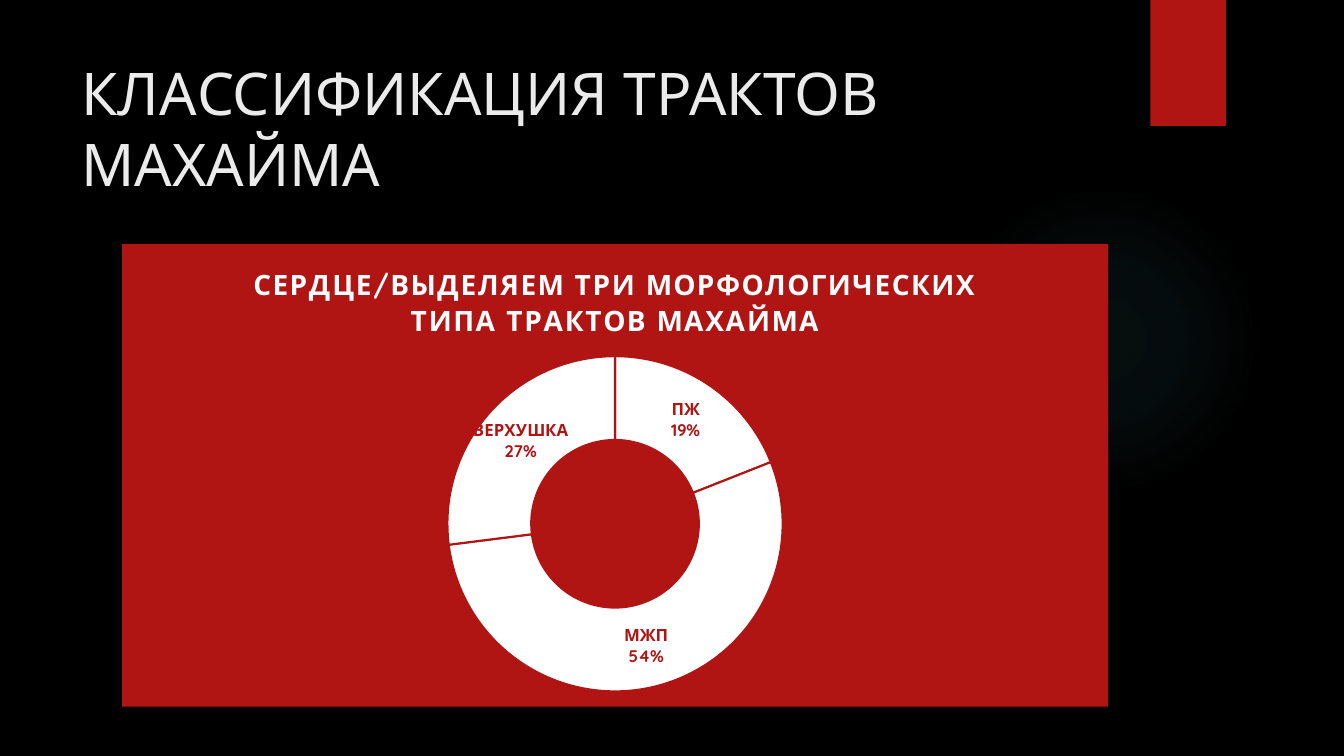
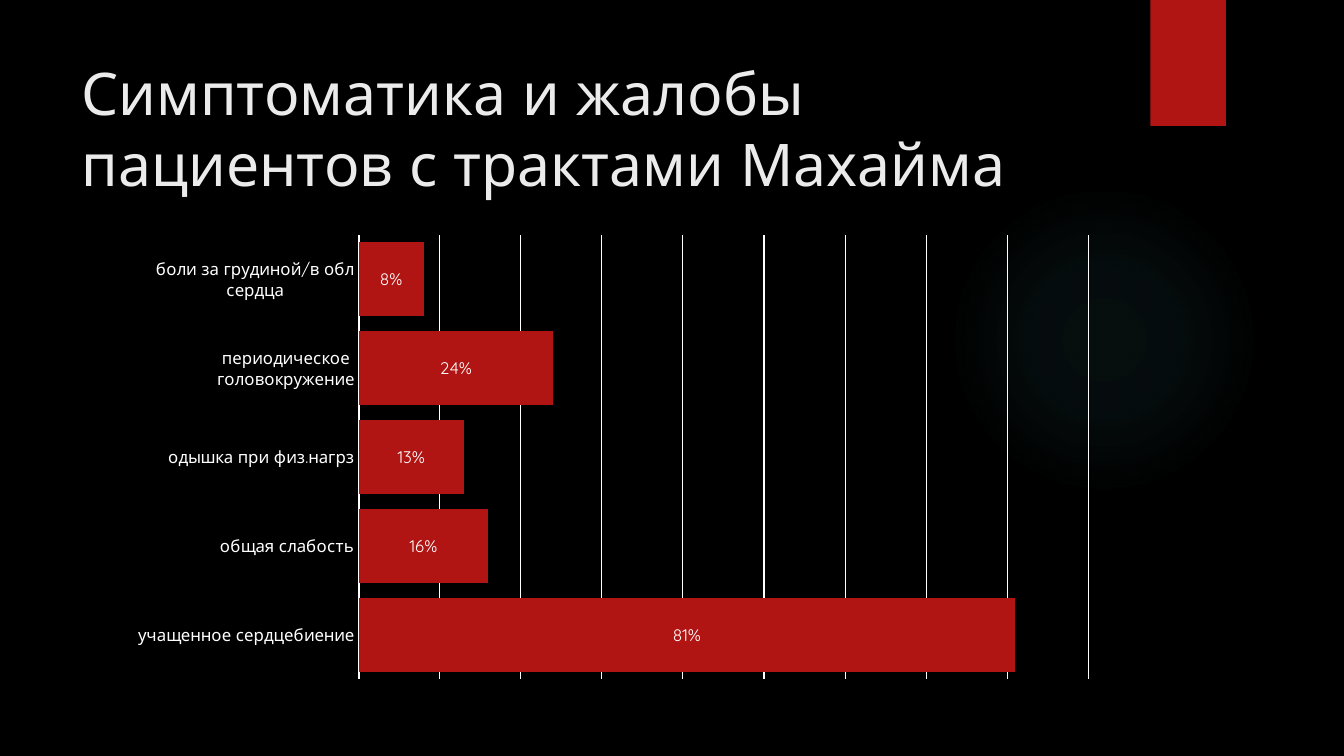
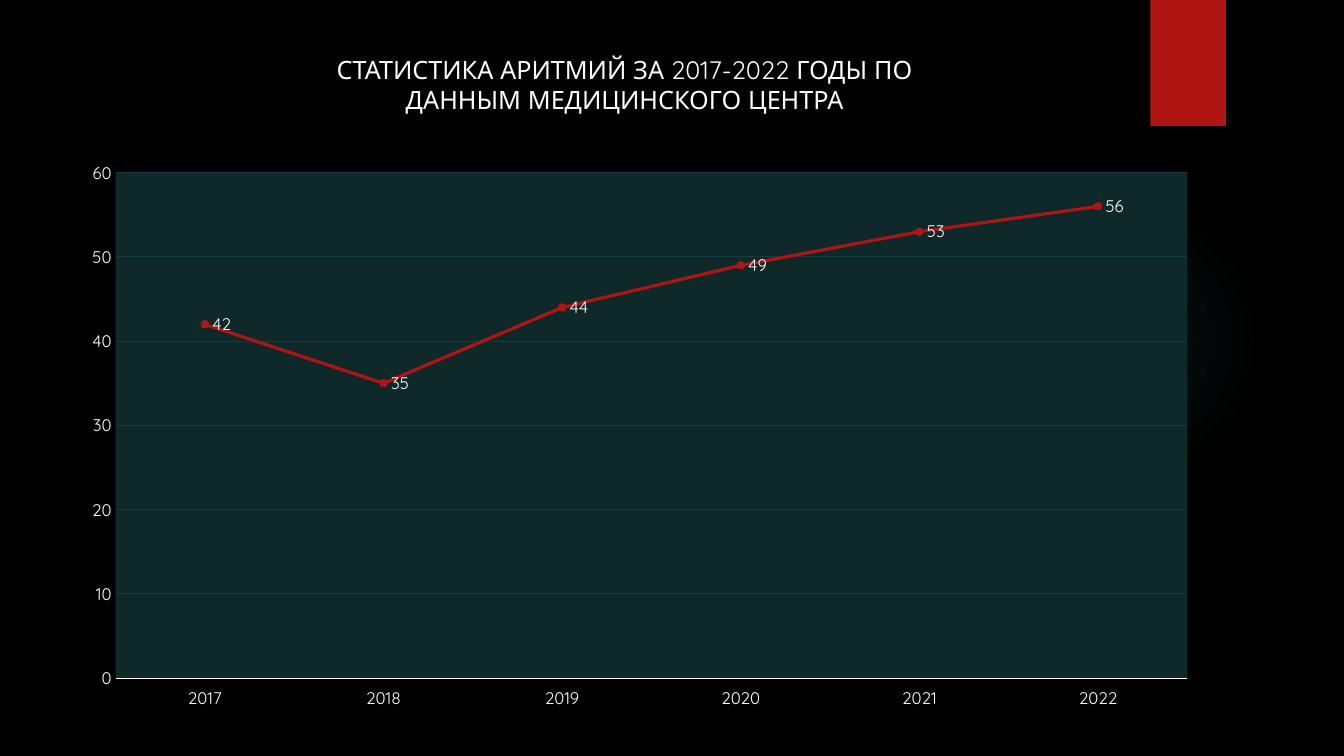
from lxml import etree
from pptx import Presentation
from pptx.chart.data import CategoryChartData
from pptx.dml.color import RGBColor
from pptx.enum.chart import XL_CHART_TYPE, XL_LABEL_POSITION, XL_MARKER_STYLE, XL_TICK_LABEL_POSITION, XL_TICK_MARK
from pptx.enum.shapes import MSO_SHAPE
from pptx.enum.text import MSO_ANCHOR, MSO_AUTO_SIZE, PP_ALIGN
from pptx.oxml import parse_xml
from pptx.oxml.ns import nsdecls, qn
from pptx.util import Inches, Pt

RING = XL_CHART_TYPE.DOUGHNUT
BARS = XL_CHART_TYPE.BAR_STACKED
LINE = XL_CHART_TYPE.LINE_MARKERS
RIGHT = XL_LABEL_POSITION.RIGHT
MID = XL_LABEL_POSITION.CENTER
DOT = XL_MARKER_STYLE.CIRCLE
LOW = XL_TICK_LABEL_POSITION.LOW
NONE = XL_TICK_MARK.NONE
OVAL = MSO_SHAPE.OVAL
RECT = MSO_SHAPE.RECTANGLE
TOP = MSO_ANCHOR.TOP
CENTRE = MSO_ANCHOR.MIDDLE
FIT = MSO_AUTO_SIZE.TEXT_TO_FIT_SHAPE
FIXED = MSO_AUTO_SIZE.NONE

FONT = "Quicksand"
WIDE, HIGH = Inches(13.333), Inches(7.5)
HUES = {
    "black": "000000",
    "red": "B01513",
    "white": "FFFFFF",
    "pale": "EBEBEB",
    "glow": "50B9C1",
    "deep": "0F282A",
    "grid": "173D40",
}
GLOW = [(0, 7), (36, 6), (69, 0)]


def hue(name):
    return RGBColor.from_string(HUES[name])


def place(x, y, w, h):
    return [int(WIDE * x / 100), int(HIGH * y / 100), int(WIDE * w / 100), int(HIGH * h / 100)]


def style(font, size, name, bold=False):
    font.name = FONT
    font.size = Pt(size)
    font.bold = bold
    font.color.rgb = hue(name)


def paint(part, name):
    part.fill.solid()
    part.fill.fore_color.rgb = hue(name)


def stroke(line, name, width):
    line.color.rgb = hue(name)
    line.width = Pt(width)


def add_form(slide, kind, area, name):
    form = slide.shapes.add_shape(kind, *place(*area))
    form.shadow.inherit = False
    paint(form, name)
    form.line.fill.background()
    return form


def add_glow(slide):
    form = add_form(slide, OVAL, (70.6, 24.4, 23.1, 41.07), "glow")
    stops = "".join(
        f'<a:gs pos="{pos * 1000}"><a:srgbClr val="{HUES["glow"]}">'
        f'<a:alpha val="{alpha * 1000}"/></a:srgbClr></a:gs>'
        for pos, alpha in GLOW)
    grad = parse_xml(
        f'<a:gradFill {nsdecls("a")}><a:gsLst>{stops}</a:gsLst><a:path path="circle">'
        '<a:fillToRect l="50000" t="50000" r="50000" b="50000"/></a:path></a:gradFill>')
    props = form._element.spPr
    props.replace(props.find(qn("a:solidFill")), grad)


def add_page(deck):
    slide = deck.slides.add_slide(deck.slide_layouts[6])
    add_glow(slide)
    add_form(slide, RECT, (85.59, 0, 5.63, 16.67), "red")
    return slide


def add_text(slide, area, text, size, name, anchor=TOP, fit=FIXED, align=None):
    frame = slide.shapes.add_textbox(*place(*area)).text_frame
    frame.word_wrap = True
    frame.auto_size = fit
    frame.vertical_anchor = anchor
    para = frame.paragraphs[0]
    para.alignment = align
    run = para.add_run()
    run.text = text
    style(run.font, size, name)


def add_title(slide, text):
    add_text(slide, (5.33, 6.67, 77.19, 20.4), text, 42, "pale", CENTRE, FIT)


def add_plot(slide, kind, area, rows, inner, form="General"):
    data = CategoryChartData(number_format=form)
    data.categories = [label for label, _ in rows]
    data.add_series("Series 1", [value for _, value in rows])
    chart = slide.shapes.add_chart(kind, *place(*area), data).chart
    style(chart.font, 10, "white")
    chart.has_legend = False
    chart.has_title = False
    plot = chart.plots[0]
    plot.vary_by_categories = False
    zone = chart._chartSpace.chart.plotArea
    old = zone.find(qn("c:layout"))
    if old is not None:
        zone.remove(old)
    sizes = "".join(f'<c:{key} val="{val}"/>' for key, val in zip("xywh", inner))
    zone.insert(0, parse_xml(
        f'<c:layout {nsdecls("c")}><c:manualLayout><c:layoutTarget val="inner"/>'
        f'<c:xMode val="edge"/><c:yMode val="edge"/>{sizes}</c:manualLayout></c:layout>'))
    return chart, plot, plot.series[0]


def make_fill(name):
    return parse_xml(
        f'<c:spPr {nsdecls("c", "a")}><a:solidFill><a:srgbClr val="{HUES[name]}"/>'
        '</a:solidFill><a:ln><a:noFill/></a:ln></c:spPr>')


def add_tags(plot, name="white", bold=False):
    plot.has_data_labels = True
    tags = plot.data_labels
    style(tags.font, 12, name, bold)
    return tags


def set_axis(axis, width):
    axis.major_tick_mark = NONE
    axis.minor_tick_mark = NONE
    style(axis.tick_labels.font, 12, "white")
    if width:
        stroke(axis.format.line, "white", width)
    else:
        axis.format.line.fill.background()


def set_scale(axis, top, step, name):
    axis.minimum_scale = 0
    axis.maximum_scale = top
    axis.major_unit = step
    axis.has_major_gridlines = True
    stroke(axis.major_gridlines.format.line, name, 0.75)


def add_ring(slide, area, text, rows):
    chart, plot, series = add_plot(slide, RING, area, rows, (0.33, 0.24, 0.34, 0.73))
    chart._chartSpace.chart.addnext(make_fill("red"))
    chart.has_title = True
    run = chart.chart_title.text_frame.paragraphs[0].add_run()
    run.text = text
    style(run.font, 20, "white", True)
    run.font._element.set("spc", "100")
    chart.chart_title.include_in_layout = False
    for index in range(len(rows)):
        point = series.points[index].format
        paint(point, "white")
        stroke(point.line, "red", 1.5)
    tags = add_tags(plot, "red", True)
    tags.number_format = "0%"
    tags.number_format_is_linked = False
    tags.show_value = False
    tags.show_percentage = True
    tags.show_category_name = True
    mark = etree.Element(qn("c:separator"))
    mark.text = "\n"
    tags._element.find(qn("c:showBubbleSize")).addnext(mark)


def add_bars(slide, area, rows):
    chart, plot, series = add_plot(slide, BARS, area, rows, (0.24, 0.02, 0.74, 0.96), "0%")
    plot.gap_width = 20
    plot.overlap = 100
    paint(series.format, "red")
    set_axis(chart.category_axis, 1.5)
    set_scale(chart.value_axis, 0.9, 0.1, "white")
    chart.value_axis.visible = False
    tags = add_tags(plot)
    tags.show_value = True
    tags.position = MID


def add_trend(slide, area, rows):
    chart, plot, series = add_plot(slide, LINE, area, rows, (0.03, 0.06, 0.95, 0.85))
    chart._chartSpace.chart.plotArea.append(make_fill("deep"))
    series.smooth = False
    stroke(series.format.line, "red", 2.25)
    series.marker.style = DOT
    series.marker.size = 5
    paint(series.marker.format, "red")
    stroke(series.marker.format.line, "red", 0.75)
    set_axis(chart.category_axis, 0.75)
    chart.category_axis.tick_label_position = LOW
    set_axis(chart.value_axis, 0)
    set_scale(chart.value_axis, 60, 10, "grid")
    tags = add_tags(plot)
    tags.show_value = True
    tags.position = RIGHT


def main():
    deck = Presentation()
    deck.slide_width, deck.slide_height = WIDE, HIGH
    paint(deck.slide_master.background, "black")

    types = add_page(deck)
    add_title(types, "КЛАССИФИКАЦИЯ ТРАКТОВ МАХАЙМА")
    add_ring(types, (9.08, 32.27, 73.37, 61.2),
             "СЕРДЦЕ/ВЫДЕЛЯЕМ ТРИ МОРФОЛОГИЧЕСКИХ ТИПА ТРАКТОВ МАХАЙМА",
             [("ПЖ", 19), ("МЖП", 54), ("ВЕРХУШКА", 27)])

    signs = add_page(deck)
    add_title(signs, "Симптоматика и жалобы пациентов с трактами Махайма")
    add_bars(signs, (9.08, 29.87, 73.37, 61.2), [
        ("учащенное сердцебиение", 0.81),
        ("общая слабость", 0.16),
        ("одышка при физ.нагрз", 0.13),
        ("периодическое головокружение", 0.24),
        ("боли за грудиной/в обл сердца", 0.08),
    ])

    years = add_page(deck)
    add_trend(years, (6.08, 18.13, 83.95, 78.67),
              [(str(2017 + turn), count) for turn, count in enumerate([42, 35, 44, 49, 53, 56])])
    add_text(years, (21.46, 6.53, 50.04, 9.47),
             "СТАТИСТИКА АРИТМИЙ ЗА 2017-2022 ГОДЫ ПО ДАННЫМ МЕДИЦИНСКОГО ЦЕНТРА",
             18, "white", align=PP_ALIGN.CENTER)

    deck.save("out.pptx")


if __name__ == "__main__":
    main()
